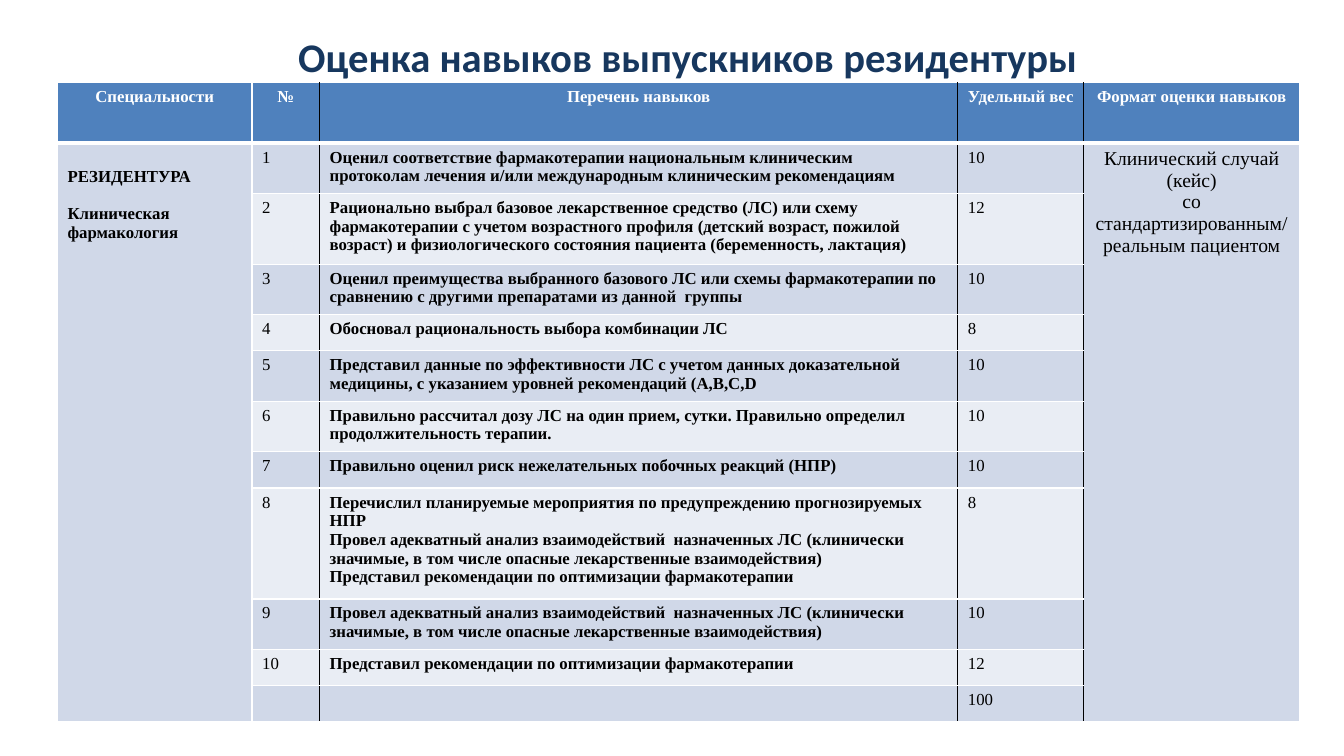
from lxml import etree
from pptx import Presentation
from pptx.dml.color import RGBColor
from pptx.enum.text import PP_ALIGN
from pptx.oxml.ns import qn
from pptx.util import Inches, Pt

CENTER, LEFT = PP_ALIGN.CENTER, PP_ALIGN.LEFT
COLORS = {"title": "17375E", "header": "4F81BD", "odd": "D0D8E8",
          "even": "E9EDF4", "white": "FFFFFF", "black": "000000"}
SERIF = "Times New Roman"
BODY = {"name": SERIF, "size": Pt(12), "bold": False}
BOLD = {**BODY, "bold": True}
LARGE = {**BODY, "size": Pt(14)}
TITLE = {"name": "Calibri", "size": Pt(29), "bold": True}

COL_WIDTHS = [1.93, 0.67, 6.33, 1.25, 2.14]
HEADER_HEIGHT = 0.6
ROW_HEIGHTS = [0.5, 0.7, 0.5, 0.36, 0.5, 0.5, 0.36, 1.1, 0.5, 0.36, 0.36]
HEADERS = ["Специальности", "№", "Перечень навыков", "Удельный вес",
           "Формат оценки навыков"]
INTERACTIONS = ("Провел адекватный анализ взаимодействий  назначенных ЛС (клинически "
                "значимые, в том числе опасные лекарственные взаимодействия)")
ADVICE = "Представил рекомендации по оптимизации фармакотерапии"
SKILLS = [
    (["Оценил соответствие фармакотерапии национальным клиническим протоколам "
      "лечения и/или международным клиническим рекомендациям"], 10),
    (["Рационально выбрал базовое лекарственное средство (ЛС) или схему "
      "фармакотерапии с учетом возрастного профиля (детский возраст, пожилой возраст) "
      "и физиологического состояния пациента (беременность, лактация)"], 12),
    (["Оценил преимущества выбранного базового ЛС или схемы фармакотерапии по "
      "сравнению с другими препаратами из данной  группы"], 10),
    (["Обосновал рациональность выбора комбинации ЛС"], 8),
    (["Представил данные по эффективности ЛС с учетом данных доказательной медицины, "
      "с указанием уровней рекомендаций (A,B,C,D"], 10),
    (["Правильно рассчитал дозу ЛС на один прием, сутки. Правильно определил "
      "продолжительность терапии."], 10),
    (["Правильно оценил риск нежелательных побочных реакций (НПР)"], 10),
    (["Перечислил планируемые мероприятия по предупреждению прогнозируемых НПР",
      INTERACTIONS, ADVICE], 8),
    ([INTERACTIONS], 10),
    ([ADVICE], 12),
]
SPECIALTY = ["РЕЗИДЕНТУРА", "Клиническая фармакология"]
ASSESSMENT = ["Клинический случай (кейс)", "со стандартизированным/", "реальным пациентом"]


def write(tf, lines, style, color="black", align=LEFT, gap=0):
    """Fill a text frame with one paragraph per line, gap points apart."""
    for i, line in enumerate(lines):
        p = tf.add_paragraph() if i else tf.paragraphs[0]
        p.alignment = align
        if i and gap:
            p.space_before = Pt(gap)
        r = p.add_run()
        r.text = line
        for key, value in style.items():
            setattr(r.font, key, value)
        r.font.color.rgb = RGBColor.from_string(COLORS[color])


def add_title(s, text):
    sp = s.shapes.add_textbox(Inches(0.57), Inches(0.31), Inches(12.51), Inches(0.51))
    tf = sp.text_frame
    tf.word_wrap = True
    tf.margin_left = tf.margin_right = tf.margin_bottom = 0
    tf.margin_top = Inches(0.01)
    write(tf, [text], TITLE, "title", CENTER)


def add_border(cell, side, color, width):
    ln = etree.SubElement(cell._tc.get_or_add_tcPr(), qn(f"a:ln{side}"), w=str(Pt(width)))
    fill = etree.SubElement(ln, qn("a:solidFill"))
    etree.SubElement(fill, qn("a:srgbClr"), val=COLORS[color])


def format_cell(cell, row, col):
    """Set borders and banded fill; inner edges right of the numbers are black."""
    add_border(cell, "L", "black" if col > 1 else "white", 1)
    add_border(cell, "R", "black" if 0 < col < len(COL_WIDTHS) - 1 else "white", 1)
    add_border(cell, "T", "white", 3 if row == 1 else 1)
    add_border(cell, "B", "white", 3 if row == 0 else 1)
    merged = col in (0, len(COL_WIDTHS) - 1)
    band = "header" if row == 0 else "odd" if merged or row % 2 else "even"
    cell.fill.solid()
    cell.fill.fore_color.rgb = RGBColor.from_string(COLORS[band])
    if not cell.text:
        p = cell.text_frame.paragraphs[0]
        etree.SubElement(p._p, qn("a:endParaRPr"), sz="1200")


def add_skills_table(s):
    heights = [HEADER_HEIGHT, *ROW_HEIGHTS]
    last_row, last_col = len(heights) - 1, len(COL_WIDTHS) - 1
    table = s.shapes.add_table(len(heights), len(COL_WIDTHS), Inches(0.57), Inches(0.82),
                               Inches(sum(COL_WIDTHS)), Inches(sum(heights))).table
    for column, width in zip(table.columns, COL_WIDTHS):
        column.width = Inches(width)
    for row, height in zip(table.rows, heights):
        row.height = Inches(height)

    for col, header in enumerate(HEADERS):
        write(table.cell(0, col).text_frame, [header], BOLD, "white", CENTER)
    for number, (skill, weight) in enumerate(SKILLS, 1):
        write(table.cell(number, 1).text_frame, [str(number)], BODY)
        write(table.cell(number, 2).text_frame, skill, BOLD)
        write(table.cell(number, 3).text_frame, [str(weight)], BODY)
    total = sum(weight for _, weight in SKILLS)
    write(table.cell(last_row, 3).text_frame, [str(total)], BODY)

    for col in (0, last_col):
        table.cell(1, col).merge(table.cell(last_row, col))
    specialty = table.cell(1, 0)
    specialty.margin_top = Inches(0.24)
    write(specialty.text_frame, SPECIALTY, BOLD, gap=13.5)
    write(table.cell(1, last_col).text_frame, ASSESSMENT, LARGE, align=CENTER)

    for row in range(len(heights)):
        for col in range(len(COL_WIDTHS)):
            format_cell(table.cell(row, col), row, col)


def main():
    prs = Presentation()
    prs.slide_width, prs.slide_height = Inches(13.33), Inches(7.5)
    s = prs.slides.add_slide(prs.slide_layouts[6])
    add_title(s, "Оценка навыков выпускников резидентуры")
    add_skills_table(s)
    prs.save("out.pptx")


if __name__ == "__main__":
    main()
